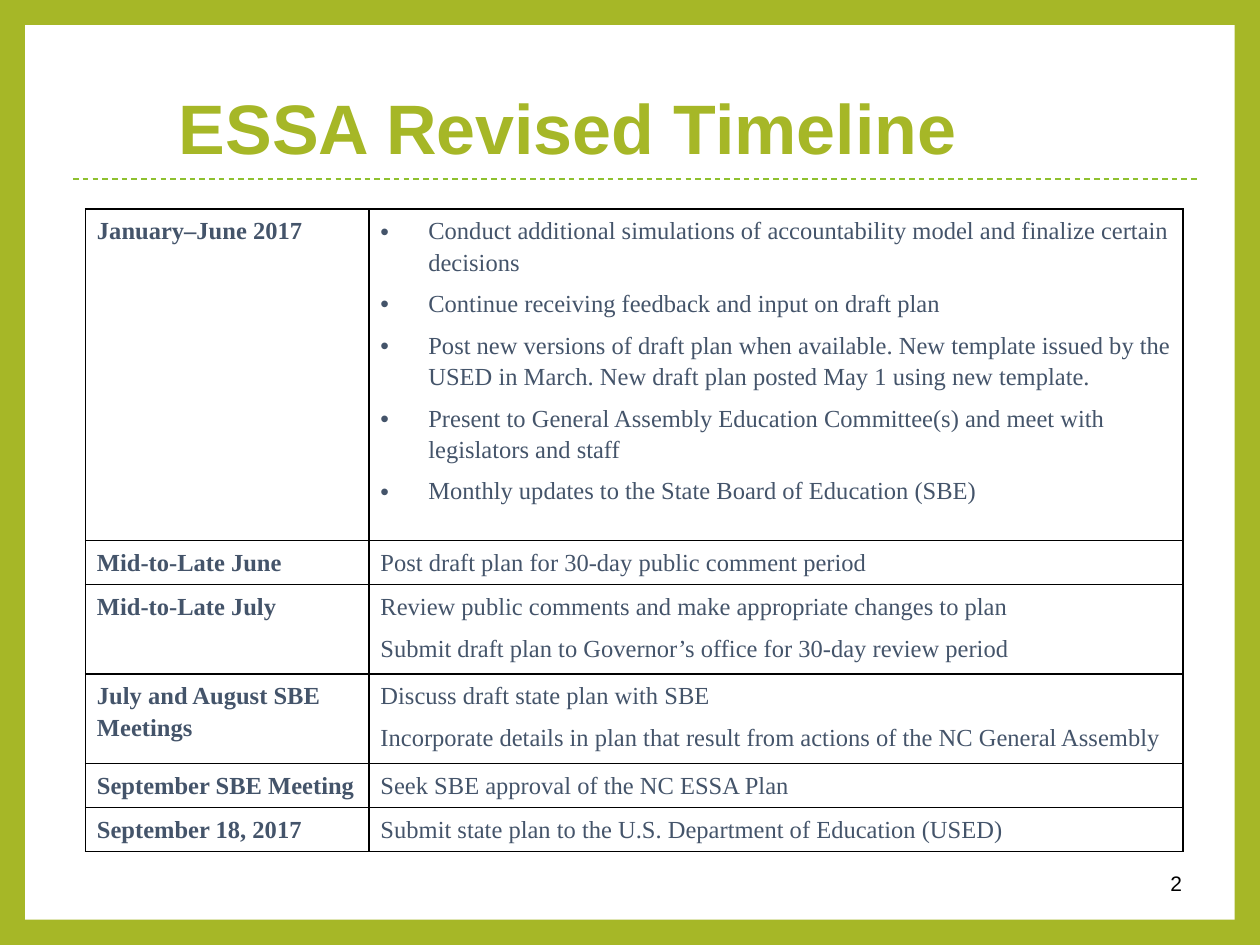
from lxml import etree
from pptx import Presentation
from pptx.dml.color import RGBColor
from pptx.enum.dml import MSO_LINE
from pptx.enum.shapes import MSO_CONNECTOR, MSO_SHAPE
from pptx.enum.text import MSO_ANCHOR, MSO_AUTO_SIZE, PP_ALIGN
from pptx.oxml import parse_xml
from pptx.oxml.ns import nsdecls, qn
from pptx.util import Inches, Pt

COLORS = {
    "green": "A6B727",
    "rule": "8EC02F",
    "white": "FFFFFF",
    "black": "000000",
    "slate": "44546A",
}
COLUMNS = [2.25, 6.46]
# Each row: height, date, actions
TIMELINE = [
    (2.63, "January–June 2017", [
        "Conduct additional simulations of accountability model and finalize certain decisions",
        "Continue receiving feedback and input on draft plan",
        "Post new versions of draft plan when available. New template issued by the "
        "USED in March. New draft plan posted May 1 using new template.",
        "Present to General Assembly Education Committee(s) and meet with legislators and staff",
        "Monthly updates to the State Board of Education (SBE)",
    ]),
    (0.35, "Mid-to-Late June", ["Post draft plan for 30-day public comment period"]),
    (0.71, "Mid-to-Late July", [
        "Review public comments and make appropriate changes to plan",
        "Submit draft plan to Governor’s office for 30-day review period",
    ]),
    (0.71, "July and August SBE Meetings", [
        "Discuss draft state plan with SBE",
        "Incorporate details in plan that result from actions of the NC General Assembly",
    ]),
    (0.35, "September SBE Meeting", ["Seek SBE approval of the NC ESSA Plan"]),
    (0.35, "September 18, 2017",
     ["Submit state plan to the U.S. Department of Education (USED)"]),
]


def rgb(name):
    return RGBColor.from_string(COLORS[name])


def add_bullet(p, color):
    pPr = p._p.get_or_add_pPr()
    pPr.set("marL", str(Inches(0.38)))
    pPr.set("indent", str(-Inches(0.38)))
    pPr.append(parse_xml(
        f'<a:buClr {nsdecls("a")}><a:srgbClr val="{COLORS[color]}"/></a:buClr>'))
    pPr.append(parse_xml(f'<a:buFont {nsdecls("a")} typeface="Arial"/>'))
    pPr.append(parse_xml(f'<a:buChar {nsdecls("a")} char="•"/>'))


def write(tf, paragraphs, size=14, font="Times New Roman", color="slate", bold=False,
          align=PP_ALIGN.LEFT, line_spacing=1.0, bullet=False):
    for i, text in enumerate(paragraphs):
        p = tf.add_paragraph() if i else tf.paragraphs[0]
        if bullet:
            add_bullet(p, color)
        p.alignment = align
        p.line_spacing = line_spacing
        p.space_before = Pt(6 if i else 0)
        r = p.add_run()
        r.text = text
        r.font.size = Pt(size)
        r.font.name = font
        r.font.bold = bold
        r.font.color.rgb = rgb(color)


def add_frame(slide):
    # White panel on the green background
    slide.background.fill.solid()
    slide.background.fill.fore_color.rgb = rgb("green")
    sp = slide.shapes.add_shape(MSO_SHAPE.RECTANGLE, Inches(0.2), Inches(0.2),
                                Inches(9.6), Inches(7.1))
    sp.shadow.inherit = False
    sp.fill.solid()
    sp.fill.fore_color.rgb = rgb("white")
    sp.line.fill.background()

    # Dashed rule under the title
    rule = slide.shapes.add_connector(MSO_CONNECTOR.STRAIGHT, Inches(0.58), Inches(1.42),
                                      Inches(9.5), Inches(1.42))
    rule.line.color.rgb = rgb("rule")
    rule.line.width = Pt(0.79)
    rule.line.dash_style = MSO_LINE.DASH
    etree.SubElement(rule._element.spPr, qn("a:effectLst"))


def set_title(slide, text):
    title = slide.shapes.title
    title.left, title.top = Inches(1.32), Inches(0.42)
    title.width, title.height = Inches(8.3), Inches(1.25)
    tf = title.text_frame
    tf.auto_size = MSO_AUTO_SIZE.NONE
    tf.vertical_anchor = MSO_ANCHOR.MIDDLE
    write(tf, [text], size=40, font="Arial", color="green", bold=True, line_spacing=0.9)
    # Bring the title in front of the panel
    slide.shapes._spTree.append(title._element)


def add_page_number(slide, number):
    box = slide.shapes.add_textbox(Inches(8.08), Inches(6.81), Inches(1.4), Inches(0.4))
    tf = box.text_frame
    tf.word_wrap = True
    tf.vertical_anchor = MSO_ANCHOR.MIDDLE
    write(tf, [number], size=12, font="Arial", color="black", align=PP_ALIGN.RIGHT)


def format_cell(cell):
    cell.margin_left = cell.margin_right = Inches(0.09)
    cell.margin_top = cell.margin_bottom = Inches(0.04)
    tcPr = cell._tc.get_or_add_tcPr()
    for side in ("lnL", "lnR", "lnT", "lnB"):
        tcPr.append(parse_xml(
            f'<a:{side} {nsdecls("a")} w="{Pt(1)}"><a:solidFill>'
            f'<a:srgbClr val="{COLORS["black"]}"/></a:solidFill></a:{side}>'))
    cell.fill.background()


def add_timeline(slide):
    height = sum(row[0] for row in TIMELINE)
    table = slide.shapes.add_table(len(TIMELINE), len(COLUMNS), Inches(0.68), Inches(1.66),
                                   Inches(sum(COLUMNS)), Inches(height)).table
    table.first_row = table.horz_banding = False
    for column, width in zip(table.columns, COLUMNS):
        column.width = Inches(width)
    for row, (row_height, date, actions) in zip(table.rows, TIMELINE):
        row.height = Inches(row_height)
        date_cell, action_cell = row.cells
        format_cell(date_cell)
        format_cell(action_cell)
        write(date_cell.text_frame, [date], bold=True, line_spacing=1.15)
        write(action_cell.text_frame, actions, line_spacing=1.15, bullet=len(actions) > 2)


def main():
    prs = Presentation()
    prs.slide_width, prs.slide_height = Inches(10), Inches(7.5)
    slide = prs.slides.add_slide(prs.slide_layouts[5])
    add_frame(slide)
    set_title(slide, "ESSA Revised Timeline")
    add_page_number(slide, "2")
    add_timeline(slide)
    prs.save("out.pptx")


if __name__ == "__main__":
    main()
